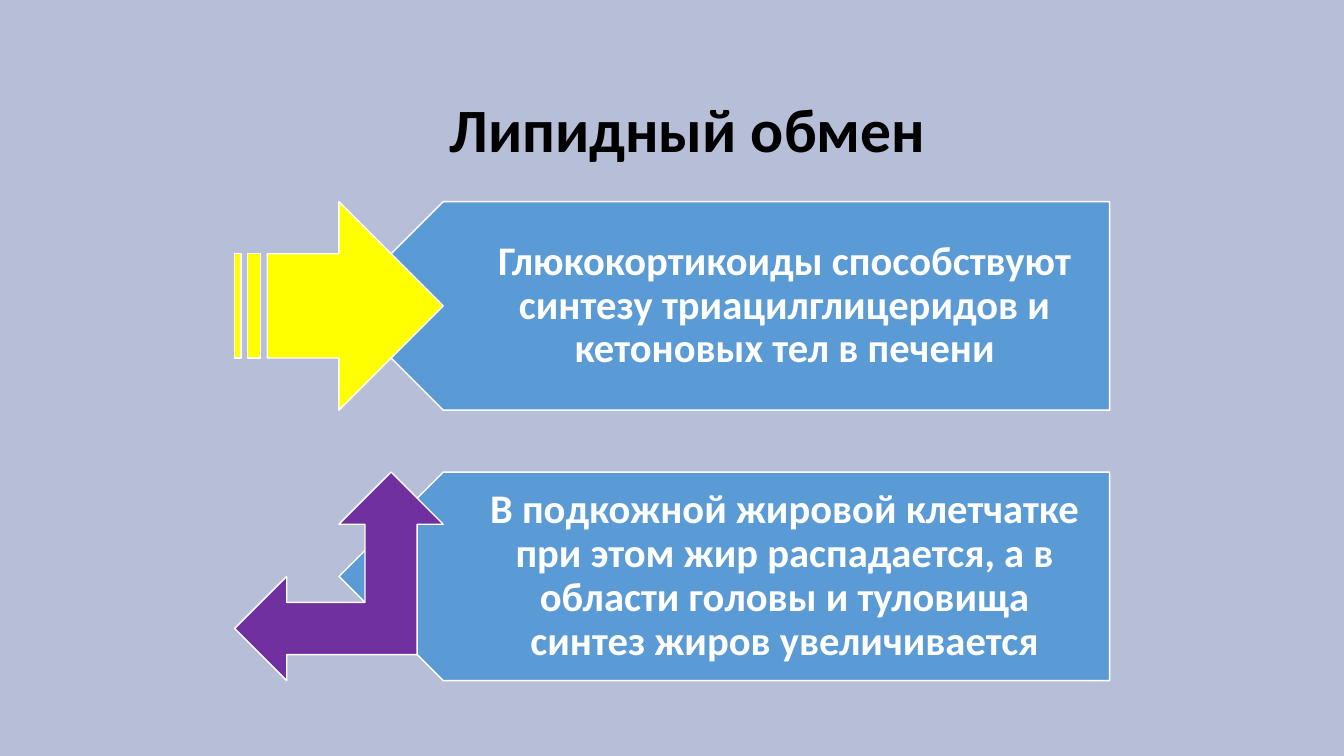
from pptx import Presentation
from pptx.dml.color import RGBColor
from pptx.enum import shapes, text
from pptx.util import Pt

COLORS = {
    "background": "B7BED7",
    "title": "000000",
    "banner": "5B9BD5",
    "synthesis": "FFFF00",
    "breakdown": "7030A0",
    "white": "FFFFFF",
}
SHAPE = shapes.MSO_SHAPE

# Effects on fat metabolism: icon shape, icon colour, statement
EFFECTS = [
    (SHAPE.STRIPED_RIGHT_ARROW, "synthesis",
     "Глюкокортикоиды способствуют синтезу триацилглицеридов и кетоновых тел в печени"),
    (SHAPE.LEFT_UP_ARROW, "breakdown",
     "В подкожной жировой клетчатке при этом жир распадается, а в области головы "
     "и туловища синтез жиров увеличивается"),
]


def color(name):
    return RGBColor.from_string(COLORS[name])


def add_figure(slide, kind, fill, left, top, width, height):
    shape = slide.shapes.add_shape(kind, Pt(left), Pt(top), Pt(width), Pt(height))
    shape.shadow.inherit = False
    shape.fill.solid()
    shape.fill.fore_color.rgb = color(fill)
    shape.line.color.rgb = color("white")
    shape.line.width = Pt(1)
    return shape


def add_text(slide, wording, size, fill, left, top, width, height, margins):
    box = slide.shapes.add_textbox(Pt(left), Pt(top), Pt(width), Pt(height))
    frame = box.text_frame
    frame.word_wrap = True
    frame.vertical_anchor = text.MSO_ANCHOR.MIDDLE
    frame.margin_left, frame.margin_top, frame.margin_right, frame.margin_bottom = map(Pt, margins)
    paragraph = frame.paragraphs[0]
    paragraph.text = wording
    paragraph.line_spacing = 0.9
    paragraph.font.name = "Calibri"
    paragraph.font.size = Pt(size)
    paragraph.font.bold = True
    paragraph.font.color.rgb = color(fill)
    return paragraph


def add_title(slide, left, top, width, height):
    add_text(slide, "Липидный обмен", 44, "title",
             left, top, width, height, (7.2, 3.6, 7.2, 3.6))


def add_effect(slide, effect, left, top, width, height):
    icon, icon_color, statement = effect
    # Banner starts under the middle of the square icon and points left
    banner_left = left + height / 2
    banner_width = width - height / 2
    banner = add_figure(slide, SHAPE.PENTAGON, "banner",
                        banner_left, top, banner_width, height)
    banner.rotation = 180
    # Statement beside the banner's tip
    tip = height / 4
    paragraph = add_text(slide, statement, 29, "white", banner_left + tip, top,
                         banner_width - tip, height, (65.8, 8.7, 16.4, 8.7))
    paragraph.alignment = text.PP_ALIGN.CENTER
    # Icon
    add_figure(slide, icon, icon_color, left, top, height, height)


def main():
    presentation = Presentation()
    presentation.slide_width = Pt(960)
    presentation.slide_height = Pt(540)
    slide = presentation.slides.add_slide(presentation.slide_layouts[6])
    slide.background.fill.solid()
    slide.background.fill.fore_color.rgb = color("background")

    add_title(slide, 314, 42.5, 646, 104.4)
    for row, effect in enumerate(EFFECTS):
        add_effect(slide, effect, 167.6, 144 + 193.2 * row, 625, 149)

    presentation.save("out.pptx")


if __name__ == "__main__":
    main()
